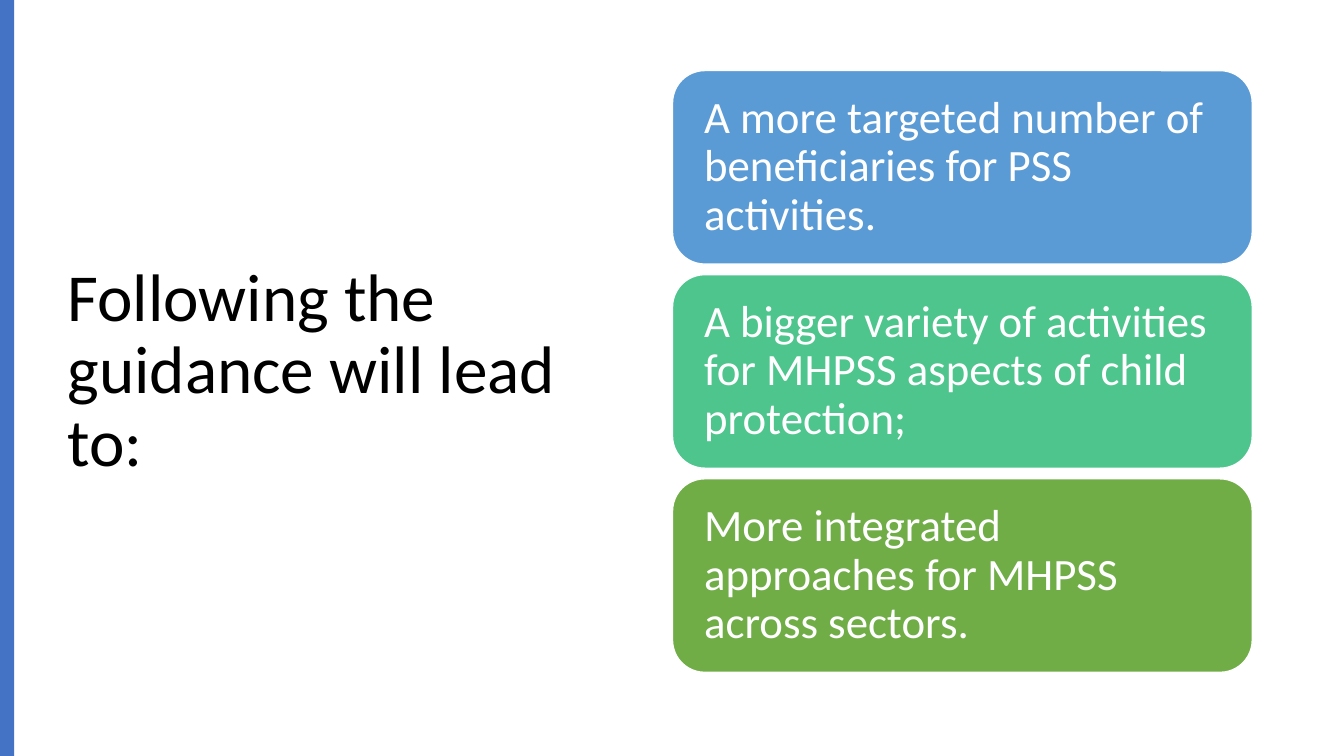
from pptx import Presentation
from pptx import util as u
from pptx.dml.color import RGBColor
from pptx.enum import shapes, text

WIDTH, HEIGHT = 13.33, 7.5
CARD_LEFT, CARD_TOP, CARD_WIDTH, CARD_HEIGHT = 6.67, 0.7, 5.75, 1.92
CARD_STEP = 2.025
OUTCOMES = [
    ("A more targeted number of beneficiaries for PSS activities.", "5B9BD5"),
    ("A bigger variety of activities for MHPSS aspects of child protection;", "4DC58D"),
    ("More integrated approaches for MHPSS across sectors.", "70AD47"),
]


def write(shape, wording, size, color, margins):
    """Fill a shape with left-aligned, vertically centred text."""
    frame = shape.text_frame
    frame.text = wording
    frame_format = {
        "word_wrap": True,
        "auto_size": text.MSO_AUTO_SIZE.NONE,
        "vertical_anchor": text.MSO_ANCHOR.MIDDLE,
        "margin_left": u.Inches(margins[0]),
        "margin_right": u.Inches(margins[0]),
        "margin_top": u.Inches(margins[1]),
        "margin_bottom": u.Inches(margins[1]),
    }
    for name, value in frame_format.items():
        setattr(frame, name, value)
    paragraph = frame.paragraphs[0]
    paragraph.alignment = text.PP_ALIGN.LEFT
    paragraph.line_spacing = 0.9
    font = paragraph.runs[0].font
    for name, value in {"name": "Calibri", "size": u.Pt(size)}.items():
        setattr(font, name, value)
    font.color.rgb = RGBColor.from_string(color)


def add_block(kind, left, top, width, height, fill):
    block = slide.shapes.add_shape(kind, *map(u.Inches, (left, top, width, height)))
    block.shadow.inherit = False
    block.fill.solid()
    block.fill.fore_color.rgb = RGBColor.from_string(fill)
    block.line.fill.background()
    return block


deck = Presentation()
deck.slide_width, deck.slide_height = u.Inches(WIDTH), u.Inches(HEIGHT)
slide = deck.slides.add_slide(deck.slide_layouts[5])

heading = slide.shapes.title
place = {"left": 0.57, "top": 0.68, "width": 5.67, "height": 6.02}
for side, length in place.items():
    setattr(heading, side, u.Inches(length))
write(heading, "Following the guidance will lead to:", 48, "000000", (0.1, 0.05))

add_block(shapes.MSO_SHAPE.RECTANGLE, 0, 0, 0.14, HEIGHT, "4472C4")

for row, (outcome, fill) in enumerate(OUTCOMES):
    card = add_block(shapes.MSO_SHAPE.ROUNDED_RECTANGLE, CARD_LEFT,
                     CARD_TOP + row * CARD_STEP, CARD_WIDTH, CARD_HEIGHT, fill)
    card.line.color.rgb = RGBColor.from_string("FFFFFF")
    card.line.width = u.Pt(1)
    write(card, outcome, 32, "FFFFFF", (0.22, 0.13))

deck.save("out.pptx")
